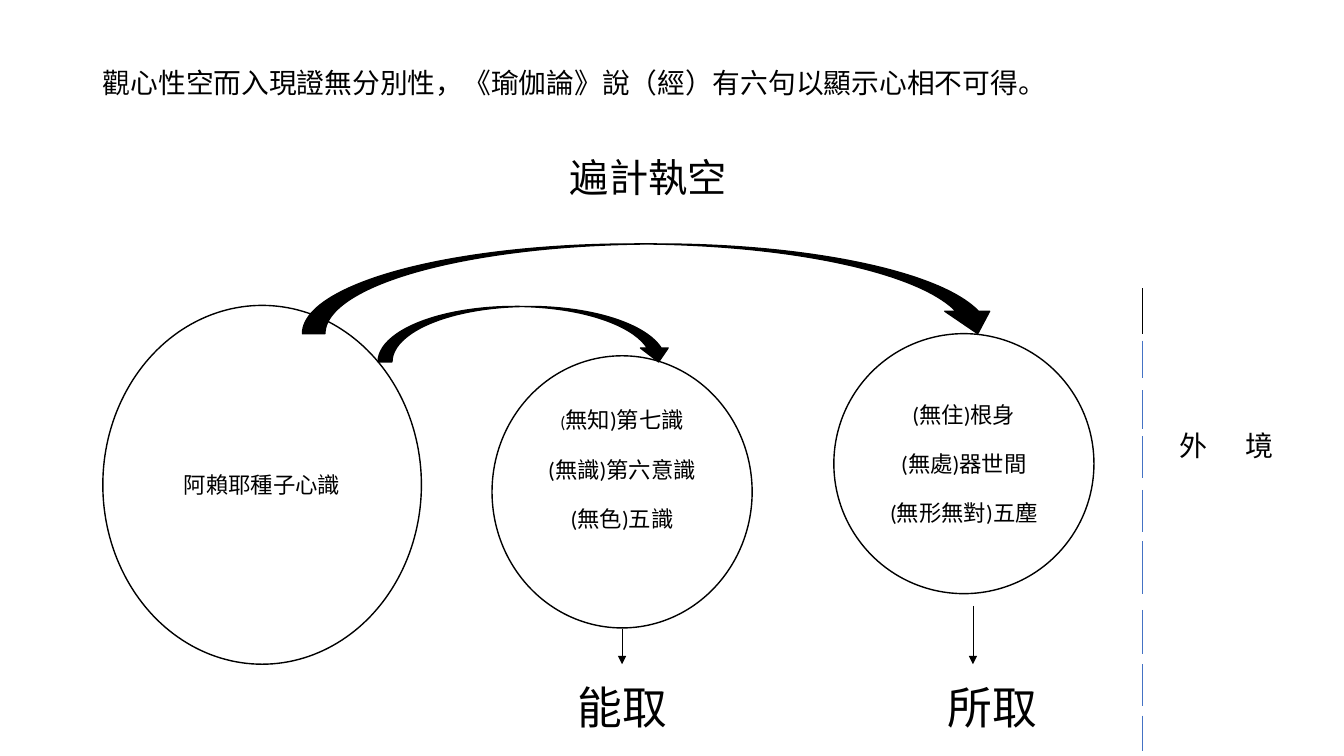
from dataclasses import dataclass

from pptx import Presentation
from pptx import util as u
from pptx.dml.color import RGBColor
from pptx.enum import shapes, text
from pptx.oxml import ns, xmlchemy

Inches = u.Inches


@dataclass(frozen=True)
class Theme:
    ink: RGBColor = RGBColor(0, 0, 0)
    paper: RGBColor = RGBColor(255, 255, 255)
    boundary: RGBColor = RGBColor(0x44, 0x72, 0xC4)
    latin_font: str = "Calibri"
    asian_font: str = "Noto Sans CJK TC"
    small_size: float = 12
    body_size: float = 16
    title_size: float = 19.8
    outside_size: float = 20
    heading_size: float = 28
    label_size: float = 32


THEME = Theme()


def write(frame, lines, size=THEME.body_size, align=text.PP_ALIGN.CENTER,
          anchor=text.MSO_ANCHOR.MIDDLE, gap=0, inset=0.1, bottom=0.05,
          tracking=None):
    frame.word_wrap = True
    frame.auto_size = text.MSO_AUTO_SIZE.NONE
    frame.vertical_anchor = anchor
    frame.margin_left = frame.margin_right = Inches(inset)
    frame.margin_top = Inches(0.05)
    frame.margin_bottom = Inches(bottom)
    for index, line in enumerate(lines):
        paragraph = frame.add_paragraph() if index else frame.paragraphs[0]
        paragraph.alignment = align
        paragraph.space_before = u.Pt(gap if index else 0)
        pieces = [(line, size)] if isinstance(line, str) else line
        for words, piece_size in pieces:
            run = paragraph.add_run()
            run.text = words
            run.font.size = u.Pt(piece_size)
            run.font.name = THEME.latin_font
            run.font.color.rgb = THEME.ink
            properties = run.font._element
            asian = xmlchemy.OxmlElement("a:ea")
            asian.set("typeface", THEME.asian_font)
            properties.find(ns.qn("a:latin")).addnext(asian)
            if tracking:
                properties.set("spc", str(tracking))


def add_label(slide, box, words, **style):
    label = slide.shapes.add_textbox(*map(Inches, box))
    write(label.text_frame, [words], **style)


def add_figure(slide, kind, box, fill):
    figure = slide.shapes.add_shape(kind, *map(Inches, box))
    figure.shadow.inherit = False
    figure.fill.solid()
    figure.fill.fore_color.rgb = fill
    figure.line.color.rgb = THEME.ink
    figure.line.width = u.Pt(1)
    return figure


def add_mind_circle(slide, box, lines, **style):
    circle = add_figure(slide, shapes.MSO_SHAPE.OVAL, box, THEME.paper)
    write(circle.text_frame, lines, inset=0, **style)


def add_vertical(slide, x, top, bottom, color=THEME.ink, arrow=False):
    stroke = slide.shapes.add_connector(
        shapes.MSO_CONNECTOR.STRAIGHT,
        Inches(x), Inches(top), Inches(x), Inches(bottom))
    stroke.line.color.rgb = color
    stroke.line.width = u.Pt(0.5)
    if arrow:
        head = xmlchemy.OxmlElement("a:tailEnd")
        head.set("type", "triangle")
        stroke.line._get_or_add_ln().append(head)
    stroke._element.spPr.append(xmlchemy.OxmlElement("a:effectLst"))


def add_title(slide, box, words):
    title = slide.shapes.title
    title.left, title.top, title.width, title.height = map(Inches, box)
    write(title.text_frame, [words], size=THEME.title_size,
          align=text.PP_ALIGN.LEFT)


def main():
    deck = Presentation()
    deck.slide_width, deck.slide_height = Inches(13.33), Inches(7.5)
    slide = deck.slides.add_slide(deck.slide_layouts[5])

    add_title(slide, (0.92, 0.52, 11.5, 0.6),
              "觀心性空而入現證無分別性，《瑜伽論》說（經）有六句以顯示心相不可得。")
    add_label(slide, (5.18, 1.4, 2.5, 0.7), "遍計執空", size=THEME.heading_size)

    add_mind_circle(slide, (1.02, 3.03, 3.16, 3.56), ["阿賴耶種子心識"])
    grasping = [[("(", THEME.small_size), ("無知)第七識", THEME.body_size)],
                "(無識)第六意識", "(無色)五識"]
    add_mind_circle(slide, (4.88, 3.53, 2.58, 2.7), grasping,
                    gap=16, bottom=0.5)
    add_mind_circle(slide, (8.27, 3.31, 2.58, 2.58),
                    ["(無住)根身", "(無處)器世間", "(無形無對)五塵"], gap=16)

    for arc in ((3, 2.42, 6.92, 0.89), (3.75, 3.04, 2.92, 0.55)):
        add_figure(slide, shapes.MSO_SHAPE.CURVED_DOWN_ARROW, arc, THEME.ink)

    for x, top, label_center, words in ((6.17, 6.24, 6.17, "能取"),
                                        (9.65, 6.01, 9.84, "所取")):
        add_vertical(slide, x, top, 6.59, arrow=True)
        add_label(slide, (label_center - 0.75, 6.69, 1.5, 0.75), words,
                  size=THEME.label_size, anchor=text.MSO_ANCHOR.TOP)

    boundary_x = 11.33
    add_vertical(slide, boundary_x, 2.86, 3.31)
    for top, bottom in ((3.38, 3.75), (3.87, 4.26), (4.33, 4.74),
                        (4.86, 5.28), (5.37, 5.89), (6.05, 6.49),
                        (6.59, 7), (7.1, 7.45)):
        add_vertical(slide, boundary_x, top, bottom, THEME.boundary)
    add_label(slide, (11.6, 4.17, 1.54, 0.5), "外 境",
              size=THEME.outside_size, align=text.PP_ALIGN.LEFT,
              tracking=1120)

    deck.save("out.pptx")


if __name__ == "__main__":
    main()
